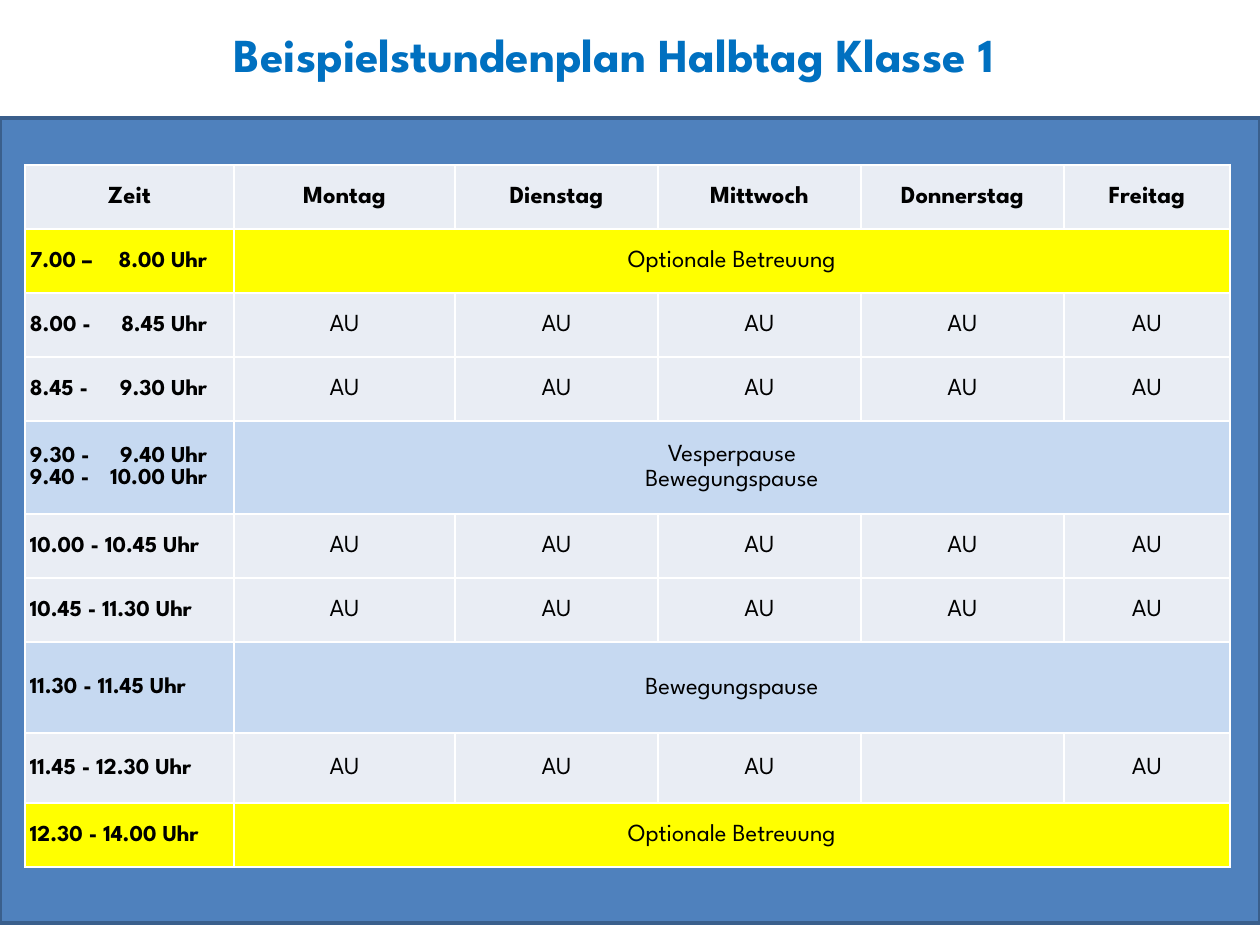
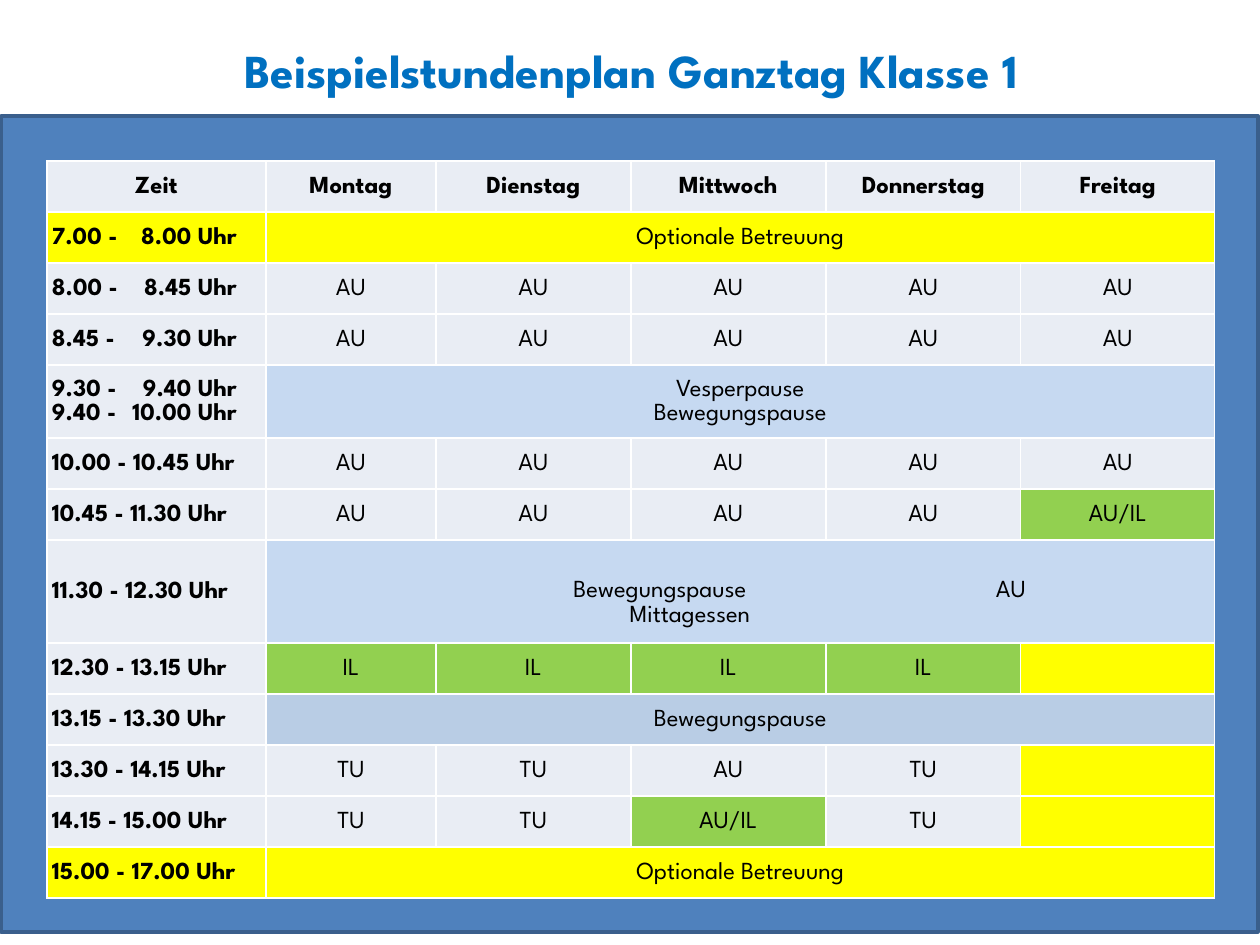
from itertools import repeat

from lxml import etree
from pptx import Presentation
from pptx.dml.color import RGBColor
from pptx.enum.shapes import MSO_SHAPE
from pptx.enum.text import MSO_ANCHOR, PP_ALIGN
from pptx.oxml.ns import qn
from pptx.util import Emu, Pt

RECTANGLE = MSO_SHAPE.RECTANGLE
MIDDLE = MSO_ANCHOR.MIDDLE
LEFT, CENTER = PP_ALIGN.LEFT, PP_ALIGN.CENTER

PX = 914400 // 126
FONT = "League Spartan"
BLACK, WHITE = "000000", "FFFFFF"
TITLE_BLUE, PANEL_BLUE, PANEL_EDGE = "0070C0", "4F81BD", "3A5F8C"
PLAIN, YELLOW, GREEN = "E9EDF4", "FFFF00", "92D050"
BREAK_BLUE, SHORT_BREAK_BLUE = "C6D9F1", "B9CDE5"

HEADINGS = ["Zeit", "Montag", "Dienstag", "Mittwoch", "Donnerstag", "Freitag"]
CARE = ["Optionale Betreuung"]
MORNING_BREAK = ["Vesperpause\nBewegungspause"]
MOVEMENT_BREAK = ["Bewegungspause"]
LUNCH = ["\tBewegungspause\tAU\n\tMittagessen"]
LUNCH_TABS = [[("ctr", 389), ("ctr", 740)], [("ctr", 419)]]
LESSONS = ["AU"] * 5

HALF_DAY = [
    (64, "7.00 –\t8.00 Uhr", YELLOW, CARE, YELLOW),
    (64, "8.00 -\t8.45 Uhr", PLAIN, LESSONS, PLAIN),
    (64, "8.45 -\t9.30 Uhr", PLAIN, LESSONS, PLAIN),
    (93, "9.30 -\t9.40 Uhr\n9.40 -\t10.00 Uhr", BREAK_BLUE, MORNING_BREAK, BREAK_BLUE),
    (64, "10.00 - 10.45 Uhr", PLAIN, LESSONS, PLAIN),
    (64, "10.45 - 11.30 Uhr", PLAIN, LESSONS, PLAIN),
    (91, "11.30 - 11.45 Uhr", BREAK_BLUE, MOVEMENT_BREAK, BREAK_BLUE),
    (70, "11.45 - 12.30 Uhr", PLAIN, ["AU", "AU", "AU", "", "AU"], PLAIN),
    (64, "12.30 - 14.00 Uhr", YELLOW, CARE, YELLOW),
]
FULL_DAY = [
    (51, "7.00 -\t8.00 Uhr", YELLOW, CARE, YELLOW),
    (51, "8.00 -\t8.45 Uhr", PLAIN, LESSONS, PLAIN),
    (51, "8.45 -\t9.30 Uhr", PLAIN, LESSONS, PLAIN),
    (73, "9.30 -\t9.40 Uhr\n9.40 -\t10.00 Uhr", PLAIN, MORNING_BREAK, BREAK_BLUE),
    (51, "10.00 - 10.45 Uhr", PLAIN, LESSONS, PLAIN),
    (51, "10.45 - 11.30 Uhr", PLAIN, ["AU", "AU", "AU", "AU", "AU/IL"], PLAIN),
    (103, "11.30 - 12.30 Uhr", PLAIN, LUNCH, BREAK_BLUE),
    (51, "12.30 - 13.15 Uhr", PLAIN, ["IL", "IL", "IL", "IL", ""], PLAIN),
    (51, "13.15 - 13.30 Uhr", PLAIN, MOVEMENT_BREAK, SHORT_BREAK_BLUE),
    (51, "13.30 - 14.15 Uhr", PLAIN, ["TU", "TU", "AU", "TU", ""], PLAIN),
    (51, "14.15 - 15.00 Uhr", PLAIN, ["TU", "TU", "AU/IL", "TU", ""], PLAIN),
    (51, "15.00 - 17.00 Uhr", YELLOW, CARE, YELLOW),
]


def px(*lengths):
    """Turn whole pixels into a list of EMU lengths."""
    return [Emu(length * PX) for length in lengths]


def color(value):
    """Turn a hex string into a colour."""
    return RGBColor.from_string(value)


def write_text(frame, text, size=14, bold=False, ink=BLACK, align=CENTER,
               spacing=1.0, tabs=None):
    """Write one paragraph per line, with optional tab stops for each line."""
    for index, (line, stops) in enumerate(zip(text.split("\n"), tabs or repeat([]))):
        paragraph = frame.add_paragraph() if index else frame.paragraphs[0]
        paragraph.alignment = align
        paragraph.line_spacing = spacing
        if stops:
            tab_list = etree.SubElement(paragraph._p.get_or_add_pPr(), qn("a:tabLst"))
            for kind, position in stops:
                etree.SubElement(tab_list, qn("a:tab"), pos=str(position * PX), algn=kind)
        if line:
            run = paragraph.add_run()
            run.text = line
            run.font.name = FONT
            run.font.size = Pt(size)
            run.font.bold = bold
            run.font.color.rgb = color(ink)


def add_borders(cell):
    """Draw a thin white line on each side of a cell."""
    properties = cell._tc.get_or_add_tcPr()
    for index, side in enumerate(("a:lnL", "a:lnR", "a:lnT", "a:lnB")):
        line = etree.Element(qn(side), w=str(Pt(1)))
        fill = etree.SubElement(line, qn("a:solidFill"))
        etree.SubElement(fill, qn("a:srgbClr"), val=WHITE)
        properties.insert(index, line)


class Timetable:
    """Holds the presentation, the timetable style and the current slide."""

    def __init__(self):
        """Start a presentation of 10 by 7.5 inches."""
        self.presentation = Presentation()
        self.presentation.slide_width, self.presentation.slide_height = px(1260, 945)
        self.slide = None

    def add_slide(self):
        """Start a blank slide."""
        layout = self.presentation.slide_layouts[6]
        self.slide = self.presentation.slides.add_slide(layout)

    def add_panel(self, *box):
        """Add the blue panel behind the timetable."""
        panel = self.slide.shapes.add_shape(RECTANGLE, *px(*box))
        panel.shadow.inherit = False
        panel.fill.solid()
        panel.fill.fore_color.rgb = color(PANEL_BLUE)
        panel.line.color.rgb = color(PANEL_EDGE)
        panel.line.width = Pt(2)

    def add_title(self, text, *box, inset=6):
        """Add the slide title, lowered by its top inset."""
        frame = self.slide.shapes.add_textbox(*px(*box)).text_frame
        frame.word_wrap = True
        frame.vertical_anchor = MIDDLE
        frame.margin_top, frame.margin_bottom = px(inset, 6)
        write_text(frame, text, size=27, bold=True, ink=TITLE_BLUE)

    def fill_cell(self, cell, text, fill, inset=0, **text_format):
        """Fill one cell and write its text."""
        cell.fill.solid()
        cell.fill.fore_color.rgb = color(fill)
        cell.vertical_anchor = MIDDLE
        cell.margin_left, cell.margin_right = px(5, 5)
        cell.margin_top, cell.margin_bottom = px(inset, 0)
        write_text(cell.text_frame, text, spacing=1.07, **text_format)
        add_borders(cell)

    def add_timetable(self, left, top, widths, heading_height, rows,
                      time_size, time_end, empty_fill):
        """Add a table with a heading row and one row per time slot."""
        heights = [heading_height] + [row[0] for row in rows]
        box = px(left, top, sum(widths), sum(heights))
        table = self.slide.shapes.add_table(len(heights), len(widths), *box).table
        table.first_row = table.horz_banding = False
        for column, width in zip(table.columns, px(*widths)):
            column.width = width
        for row, height in zip(table.rows, px(*heights)):
            row.height = height
        for index, heading in enumerate(HEADINGS):
            self.fill_cell(table.cell(0, index), heading, PLAIN, bold=True)
        for index, (_, time, time_fill, entries, entry_fill) in enumerate(rows, 1):
            self.fill_cell(table.cell(index, 0), time, time_fill, size=time_size,
                           bold=True, align=LEFT,
                           tabs=repeat([("r", time_end)]) if "\t" in time else None)
            self.add_entries(table, index, entries, entry_fill, empty_fill)

    def add_entries(self, table, index, entries, fill, empty_fill):
        """Write five daily entries, or one entry across all days."""
        if len(entries) == 1:
            table.cell(index, 1).merge(table.cell(index, 5))
            entries = entries + [""] * 4
            empty_fill = fill
        for day, entry in enumerate(entries, 1):
            cell = table.cell(index, day)
            if "\t" in entry:
                self.fill_cell(cell, entry, fill, inset=24, align=LEFT, tabs=LUNCH_TABS)
            elif "IL" in entry:
                self.fill_cell(cell, entry, GREEN)
            else:
                self.fill_cell(cell, entry, fill if entry else empty_fill)


def main():
    """Build both timetables and save them."""
    timetable = Timetable()

    timetable.add_slide()
    timetable.add_panel(0, 118, 1260, 805)
    timetable.add_title("Beispielstundenplan Halbtag Klasse 1", -1, -81, 1230, 227, inset=48)
    timetable.add_timetable(25, 165, [209, 221, 203, 203, 203, 166], 64, HALF_DAY,
                            time_size=13, time_end=177, empty_fill=PLAIN)

    timetable.add_slide()
    timetable.add_panel(1, 116, 1257, 816)
    timetable.add_title("Beispielstundenplan Ganztag Klasse 1", 1, -9, 1260, 157)
    timetable.add_timetable(47, 161, [219, 170, 195, 195, 195, 194], 51, FULL_DAY,
                            time_size=14, time_end=185, empty_fill=YELLOW)

    timetable.presentation.save("out.pptx")


if __name__ == "__main__":
    main()
